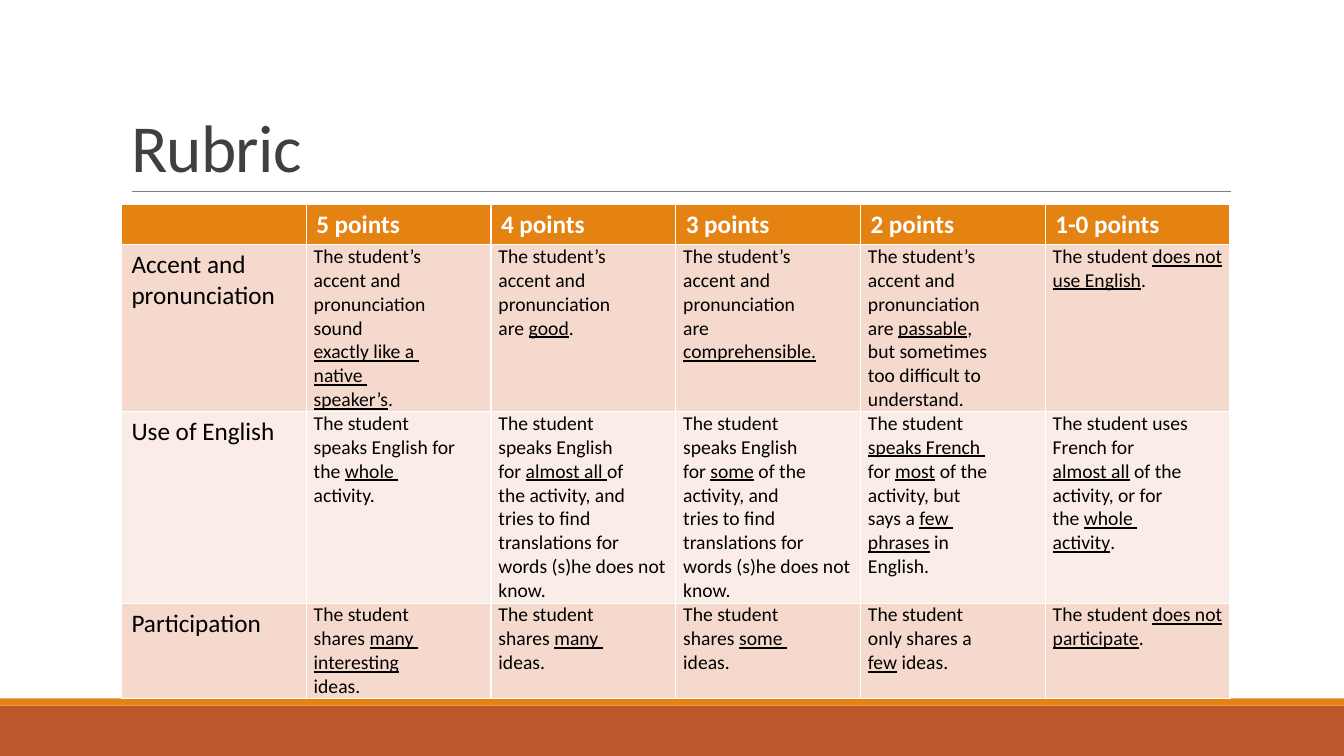
from pptx import Presentation
from pptx import util as u
from pptx.dml.color import RGBColor
from pptx.enum import shapes, text
from pptx.oxml.ns import qn
from lxml import etree

# Rubric text: one paragraph per line, underscores enclose underlined words
HEADINGS = ["", "5 points", "4 points", "3 points", "2 points", "1-0 points"]
CRITERIA = [
    ["Accent and pronunciation",
     "The student’s\naccent and\npronunciation\nsound\n_exactly like a _\n_native _\n_speaker’s_.",
     "The student’s\naccent and\npronunciation\nare _good_.",
     "The student’s\naccent and\npronunciation\nare\n_comprehensible._",
     "The student’s\naccent and\npronunciation\nare _passable_,\nbut sometimes\n"
     "too difficult to\nunderstand.",
     "The student _does not use English_."],
    ["Use of English",
     "The student\nspeaks English for\nthe _whole _\nactivity.",
     "The student\nspeaks English\nfor _almost all _of\nthe activity, and\ntries to find\n"
     "translations for words (s)he does not know.",
     "The student\nspeaks English\nfor _some_ of the\nactivity, and\ntries to find\n"
     "translations for words (s)he does not know.",
     "The student\n_speaks French _\nfor _most_ of the\nactivity, but\nsays a _few _\n"
     "_phrases_ in\nEnglish.",
     "The student uses French for\n_almost all_ of the\nactivity, or for\n"
     "the _whole _\n_activity_."],
    ["Participation",
     "The student\nshares _many _\n_interesting_\nideas.",
     "The student\nshares _many _\nideas.",
     "The student\nshares _some _\nideas.",
     "The student\nonly shares a\n_few_ ideas.",
     "The student _does not participate_."],
]
ROW_HEIGHTS = [1.03, 4.19, 4.82, 2.41]


def colour(code):
    return RGBColor.from_string(code)


class RubricPage:
    font = "Calibri"
    orange, rust, grey, dark = "E48312", "BD582C", "808080", "404040"
    white, black = "FFFFFF", "000000"
    bands = ["F5D9CC", "FAEDE7"]

    def __init__(self, deck):
        self.page = deck.slides.add_slide(deck.slide_layouts[5])

    def style(self, span, size, code, bold=False):
        span.font.name = self.font
        span.font.size = u.Pt(size)
        span.font.bold = bold
        span.font.color.rgb = colour(code)

    def bar(self, left, top, width, height, code):
        box = self.page.shapes.add_shape(
            shapes.MSO_SHAPE.RECTANGLE, u.Cm(left), u.Cm(top), u.Cm(width), u.Cm(height))
        box.shadow.inherit = False
        box.fill.solid()
        box.fill.fore_color.rgb = colour(code)
        box.line.fill.background()

    def rule(self, left, right, top):
        line = self.page.shapes.add_connector(
            shapes.MSO_CONNECTOR.STRAIGHT, u.Cm(left), u.Cm(top), u.Cm(right), u.Cm(top))
        line.line.color.rgb = colour(self.grey)
        line.line.width = u.Pt(0.5)
        etree.SubElement(line._element.spPr, qn("a:effectLst"))

    def title(self, words, left, top, width, height):
        box = self.page.shapes.title
        box.left, box.top, box.width, box.height = map(u.Cm, (left, top, width, height))
        frame = box.text_frame
        frame.text = words
        frame.auto_size = text.MSO_AUTO_SIZE.NONE
        frame.vertical_anchor = text.MSO_ANCHOR.BOTTOM
        para = frame.paragraphs[0]
        para.alignment = text.PP_ALIGN.LEFT
        para.line_spacing = 0.85
        span = para.runs[0]
        self.style(span, 48, self.dark)
        span.font._element.set("spc", "-50")

    def cell(self, cell, words, fill, size, code, bold=False):
        cell.fill.solid()
        cell.fill.fore_color.rgb = colour(fill)
        frame = cell.text_frame
        frame.text = words.replace("_", "")
        for para, line in zip(frame.paragraphs, words.split("\n")):
            para.text = ""
            for index, piece in enumerate(line.split("_")):
                if piece:
                    span = para.add_run()
                    span.text = piece
                    self.style(span, size, code, bold)
                    if index % 2:
                        span.font.underline = True

    def table(self, left, top, width, heights, headings, criteria):
        frame = self.page.shapes.add_table(
            len(heights), len(headings), u.Cm(left), u.Cm(top), u.Cm(width), u.Cm(sum(heights)))
        grid = frame.table
        for row, height in zip(grid.rows, heights):
            row.height = u.Cm(height)
        for column, heading in enumerate(headings):
            self.cell(grid.cell(0, column), heading, self.orange, 18, self.white, True)
        for row, entries in enumerate(criteria, 1):
            for column, words in enumerate(entries):
                cell = grid.cell(row, column)
                size = 14 if column else 18
                self.cell(cell, words, self.bands[(row - 1) % 2], size, self.black)
                if column:
                    cell.margin_left = cell.margin_right = u.Cm(0.19)
                    cell.margin_top = cell.margin_bottom = 0


def main():
    deck = Presentation()
    deck.slide_width, deck.slide_height = u.Cm(33.87), u.Cm(19.05)
    rubric = RubricPage(deck)

    # Footer bands and title rule
    rubric.bar(0, 17.78, 33.87, 1.27, rubric.rust)
    rubric.bar(0, 17.6, 33.87, 0.18, rubric.orange)
    rubric.rule(3.32, 31.01, 4.83)

    # Title and grading table
    rubric.title("Rubric", 3.05, 0.8, 27.94, 4.03)
    rubric.table(3.06, 5.14, 27.94, ROW_HEIGHTS, HEADINGS, CRITERIA)
    deck.save("out.pptx")


if __name__ == "__main__":
    main()
